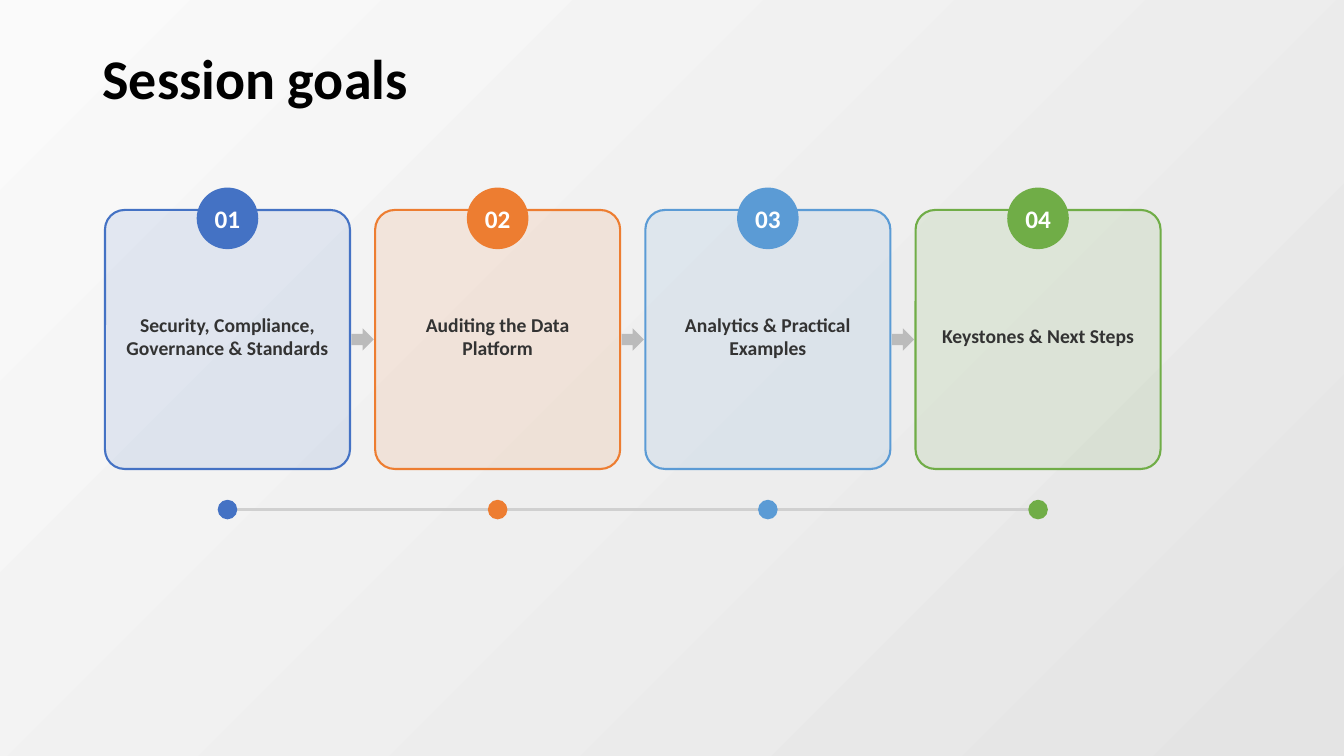
from lxml import etree
from pptx import Presentation
from pptx.dml.color import RGBColor
from pptx.enum import shapes, text
from pptx.oxml import ns
from pptx.util import Pt

BLUE = RGBColor(0x44, 0x72, 0xC4)
ORANGE = RGBColor(0xED, 0x7D, 0x31)
SKY = RGBColor(0x5B, 0x9B, 0xD5)
GREEN = RGBColor(0x70, 0xAD, 0x47)
BLACK = RGBColor(0, 0, 0)
WHITE = RGBColor(0xFF, 0xFF, 0xFF)
INK = RGBColor(0x33, 0x33, 0x33)
ARROW = RGBColor(0xBB, 0xBB, 0xBB)
TRACK = RGBColor(0xD0, 0xD0, 0xD0)
LIGHT = RGBColor(0xFA, 0xFA, 0xFA)
SHADE = RGBColor(0xE4, 0xE4, 0xE4)
KIND = shapes.MSO_SHAPE

GOALS = [
    ("Security, Compliance, Governance & Standards", BLUE, 34),
    ("Auditing the Data Platform", ORANGE, 34),
    ("Analytics & Practical Examples", SKY, 34),
    ("Keystones & Next Steps", GREEN, 17),
]
LEFT, STEP, WIDTH = 75, 193, 175
MID = 240


def draw(host, kind, left, top, width, height, color):
    item = host.shapes.add_shape(kind, Pt(left), Pt(top), Pt(width), Pt(height))
    item.shadow.inherit = False
    item.fill.solid()
    item.fill.fore_color.rgb = color
    item.line.fill.background()
    return item


def write(item, words, size, color, align, frame):
    box = item.text_frame
    box.text = words
    for name, value in frame.items():
        setattr(box, name, value)
    para = box.paragraphs[0]
    para.alignment = align
    font = para.runs[0].font
    for name, value in {"name": "Calibri", "size": Pt(size), "bold": True}.items():
        setattr(font, name, value)
    font.color.rgb = color
    return para


deck = Presentation()
deck.slide_width, deck.slide_height = Pt(960), Pt(540)
slide = deck.slides.add_slide(deck.slide_layouts[5])

back = slide.background.fill
back.gradient()
back.gradient_angle = 315
for stop, color, place in zip(back.gradient_stops, (LIGHT, SHADE), (0, 1)):
    stop.color.rgb = color
    stop.position = place

center = text.PP_ALIGN.CENTER
middle = {"vertical_anchor": text.MSO_ANCHOR.MIDDLE}
flush = {"margin_top": 0, "margin_bottom": 0}
badge = {**middle, **flush, "margin_left": 0, "margin_right": 0, "word_wrap": False}
label = {**middle, **flush, "margin_left": Pt(3), "margin_right": Pt(3),
         "word_wrap": True, "auto_size": text.MSO_AUTO_SIZE.SHAPE_TO_FIT_TEXT}

title = slide.shapes.title
for name, value in {"left": 66, "top": 29, "width": 828, "height": 58}.items():
    setattr(title, name, Pt(value))
write(title, "Session goals", 40, BLACK, text.PP_ALIGN.LEFT, middle).line_spacing = 0.9

for i, (words, color, height) in enumerate(GOALS):
    left = LEFT + i * STEP
    group = slide.shapes.add_group_shape()

    card = draw(group, KIND.ROUNDED_RECTANGLE, left, 150, WIDTH, 185, color)
    card.adjustments[0] = 0.08
    card.line.color.rgb = color
    card.line.width = Pt(1.5)
    tint = card.fill._xPr.find(ns.qn("a:solidFill"))[0]
    etree.SubElement(tint, ns.qn("a:alpha"), val="12000")

    disc = draw(group, KIND.OVAL, left + WIDTH / 2 - 22, 134, 44, 44, color)
    write(disc, f"{i + 1:02}", 18, WHITE, center, badge)

    note = group.shapes.add_textbox(Pt(left + 10), Pt(MID - height / 2), Pt(155), Pt(height))
    write(note, words, 14, INK, center, label)

    if i < len(GOALS) - 1:
        draw(slide, KIND.RIGHT_ARROW, left + WIDTH + 1, 234.5, 16, 16, ARROW)

draw(slide, KIND.RECTANGLE, LEFT + WIDTH / 2, 363, STEP * 3, 2, TRACK)
for i, (words, color, height) in enumerate(GOALS):
    draw(slide, KIND.OVAL, LEFT + i * STEP + WIDTH / 2 - 7, 357, 14, 14, color)

deck.save("out.pptx")
